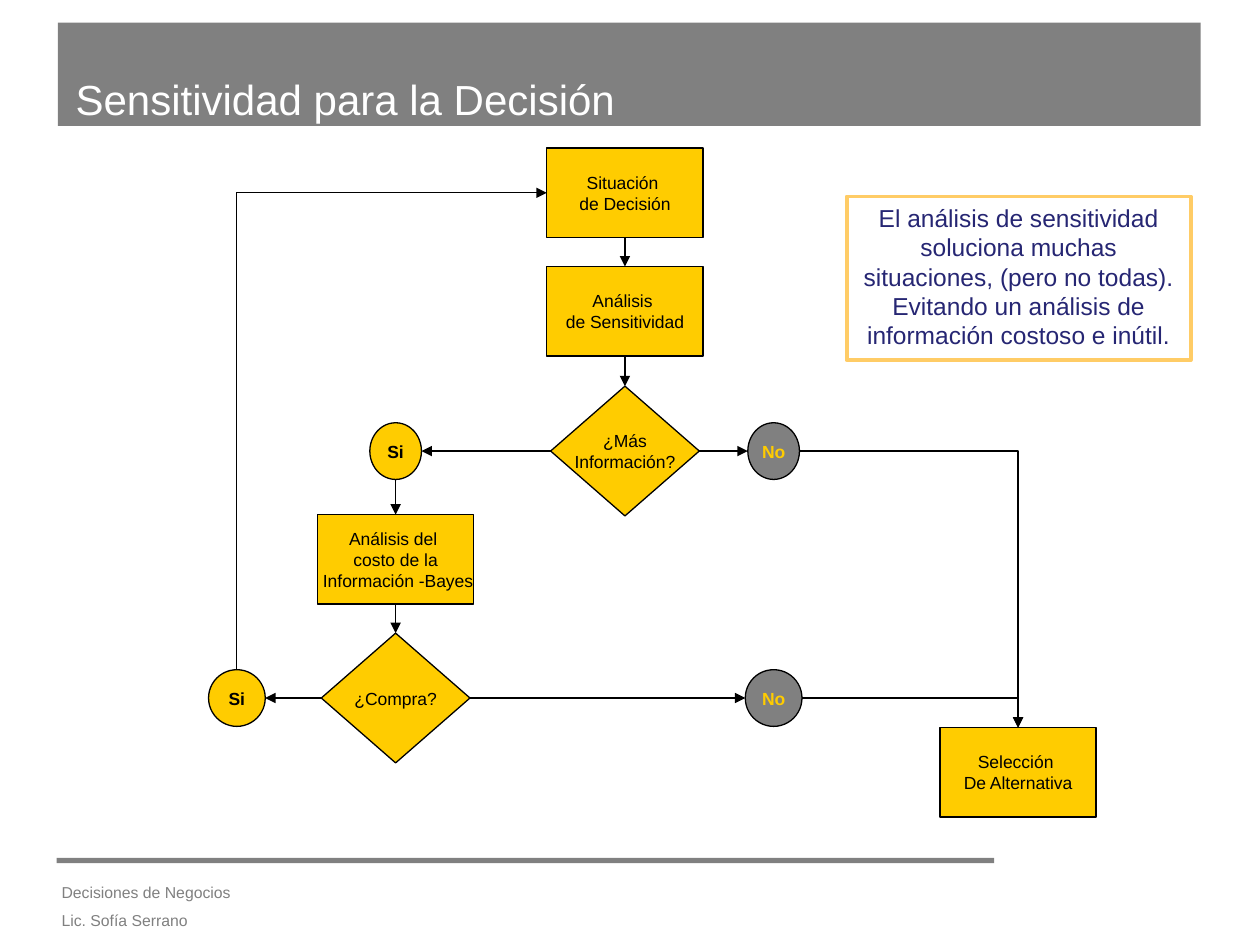
from dataclasses import dataclass

from lxml import etree
from pptx import Presentation
from pptx.dml.color import RGBColor
from pptx.enum import shapes, text
from pptx.oxml import ns
from pptx.util import Inches, Pt


@dataclass(frozen=True)
class Theme:
    font: str = "Arial"
    gray: RGBColor = RGBColor(0x80, 0x80, 0x80)
    yellow: RGBColor = RGBColor(0xFF, 0xCC, 0x00)
    orange: RGBColor = RGBColor(0xFF, 0xCC, 0x66)
    navy: RGBColor = RGBColor(0x26, 0x26, 0x73)
    black: RGBColor = RGBColor(0, 0, 0)
    white: RGBColor = RGBColor(0xFF, 0xFF, 0xFF)
    title_size: int = 24
    callout_size: int = 14
    node_size: int = 10
    footer_size: int = 9
    thin: float = 0.75
    thick: float = 2.25


theme = Theme()
SHAPE = shapes.MSO_SHAPE
TOP, LEFT, BOTTOM, RIGHT = range(4)
SIDE_POINTS = ((0.5, 0), (0, 0.5), (0.5, 1), (1, 0.5))


def write_text(shape, content, size, color, bold=False, align=text.PP_ALIGN.CENTER,
               anchor=text.MSO_ANCHOR.MIDDLE, wrap=True, spacing=None):
    """Write one paragraph per line of content."""
    frame = shape.text_frame
    frame.word_wrap = wrap
    frame.vertical_anchor = anchor
    frame.text = content
    for paragraph in frame.paragraphs:
        paragraph.alignment = align
        paragraph.line_spacing = spacing
        font = paragraph.runs[0].font
        font.name, font.size, font.bold = theme.font, Pt(size), bold
        font.color.rgb = color


def add_arrow(kind, begin, end):
    """Draw a thin black connector with an arrowhead at its end."""
    connector = slide.shapes.add_connector(kind, *begin, *end)
    connector.line.color.rgb = theme.black
    connector.line.width = Pt(theme.thin)
    etree.SubElement(connector.line._get_or_add_ln(), ns.qn("a:tailEnd"), type="triangle")
    etree.SubElement(connector._element.spPr, ns.qn("a:effectLst"))
    return connector


presentation = Presentation()
presentation.slide_width, presentation.slide_height = Inches(10), Inches(7.5)
slide = presentation.slides.add_slide(presentation.slide_layouts[5])

# Title band and footer rule
for left, top, width, height in ((0.46, 0.18, 9.07, 0.82), (0.45, 6.81, 7.44, 0.04)):
    bar = slide.shapes.add_shape(SHAPE.RECTANGLE, Inches(left), Inches(top),
                                 Inches(width), Inches(height))
    bar.shadow.inherit = False
    bar.fill.solid()
    bar.fill.fore_color.rgb = theme.gray
    bar.line.fill.background()

# Title, brought in front of its band
title = slide.shapes.title
title.left, title.top, title.width, title.height = map(Inches, (0.5, 0.16, 9, 1.25))
write_text(title, "Sensitividad para la Decisión", theme.title_size, theme.white,
           align=text.PP_ALIGN.LEFT)
slide.shapes._spTree.append(title._element)

# Footer
footer = slide.shapes.add_textbox(Inches(0.39), Inches(6.88), Inches(3.05), Inches(0.55))
write_text(footer, "Decisiones de Negocios\nLic. Sofía Serrano", theme.footer_size, theme.gray,
           align=text.PP_ALIGN.LEFT, anchor=text.MSO_ANCHOR.TOP, spacing=1.5)

# Flowchart nodes: each is placed by its centre
main_x, left_x, loop_x, no_x, final_x = 4.96, 3.14, 1.88, 6.14, 8.08
info_y, buy_y = 3.58, 5.54
box = (SHAPE.RECTANGLE, 1.24, 0.71)
decision = (SHAPE.FLOWCHART_DECISION, 1.18, 1.03)
oval = (SHAPE.OVAL, 0.41, 0.45)
circle = (SHAPE.OVAL, 0.45, 0.45)
node_specs = {
    "situation": (box, main_x, 1.53, "Situación \nde Decisión"),
    "sensitivity": (box, main_x, 2.47, "Análisis \nde Sensitividad"),
    "more_info": (decision, main_x, info_y, "¿Más\nInformación?"),
    "info_yes": (oval, left_x, info_y, "Si"),
    "info_no": (oval, no_x, info_y, "No"),
    "bayes": (box, left_x, 4.44, "Análisis del \ncosto de la\n Información -Bayes"),
    "buy": (decision, left_x, buy_y, "¿Compra?"),
    "buy_yes": (circle, loop_x, buy_y, "Si"),
    "buy_no": (circle, no_x, buy_y, "No"),
    "selection": (box, final_x, 6.13, "Selección \nDe Alternativa"),
}
nodes = {}
for name, ((kind, width, height), x, y, label) in node_specs.items():
    node = slide.shapes.add_shape(kind, Inches(x - width / 2), Inches(y - height / 2),
                                  Inches(width), Inches(height))
    is_no = label == "No"
    node.shadow.inherit = False
    node.fill.solid()
    node.fill.fore_color.rgb = theme.gray if is_no else theme.yellow
    node.line.color.rgb = theme.black
    node.line.width = Pt(theme.thin)
    write_text(node, label, theme.node_size, theme.yellow if is_no else theme.black,
               bold=kind == SHAPE.OVAL, wrap=False)
    nodes[name] = node

# Middle of every side of every node
ports = {
    (name, side): (int(node.left + node.width * across), int(node.top + node.height * down))
    for name, node in nodes.items()
    for side, (across, down) in enumerate(SIDE_POINTS)
}

# Straight arrows, joined wherever they meet a box or a decision
for begin, end in (
    (("situation", BOTTOM), ("sensitivity", TOP)),
    (("sensitivity", BOTTOM), ("more_info", TOP)),
    (("more_info", RIGHT), ("info_no", LEFT)),
    (("more_info", LEFT), ("info_yes", RIGHT)),
    (("info_yes", BOTTOM), ("bayes", TOP)),
    (("bayes", BOTTOM), ("buy", TOP)),
    (("buy", LEFT), ("buy_yes", RIGHT)),
    (("buy", RIGHT), ("buy_no", LEFT)),
):
    arrow = add_arrow(shapes.MSO_CONNECTOR.STRAIGHT, ports[begin], ports[end])
    for (name, side), join in ((begin, arrow.begin_connect), (end, arrow.end_connect)):
        if nodes[name].auto_shape_type != SHAPE.OVAL:
            join(nodes[name], side)

# One-bend arrows; the loop back turns a quarter so that it leaves upwards
for begin, end, turned in (
    (("info_no", RIGHT), ("selection", TOP), False),
    (("buy_no", RIGHT), ("selection", TOP), False),
    (("buy_yes", TOP), ("situation", LEFT), True),
):
    (x1, y1), (x2, y2) = start, finish = ports[begin], ports[end]
    if turned:
        middle_x, middle_y = (x1 + x2) // 2, (y1 + y2) // 2
        half_width, half_height = abs(y2 - y1) // 2, abs(x2 - x1) // 2
        start = (middle_x - half_width, middle_y - half_height)
        finish = (middle_x + half_width, middle_y + half_height)
    elbow = add_arrow(shapes.MSO_CONNECTOR.ELBOW, start, finish)
    properties = elbow._element.spPr
    properties.find(ns.qn("a:prstGeom")).set("prst", "bentConnector2")
    if turned:
        properties.find(ns.qn("a:xfrm")).set("rot", str(270 * 60000))

# Callout
callout = slide.shapes.add_shape(SHAPE.RECTANGLE, Inches(6.72), Inches(1.56),
                                 Inches(2.73), Inches(1.3))
callout.shadow.inherit = False
callout.fill.background()
callout.line.color.rgb = theme.orange
callout.line.width = Pt(theme.thick)
write_text(callout, "El análisis de sensitividad soluciona muchas situaciones, (pero no todas). "
           "Evitando un análisis de información costoso e inútil.",
           theme.callout_size, theme.navy, anchor=text.MSO_ANCHOR.TOP)

presentation.save("out.pptx")
